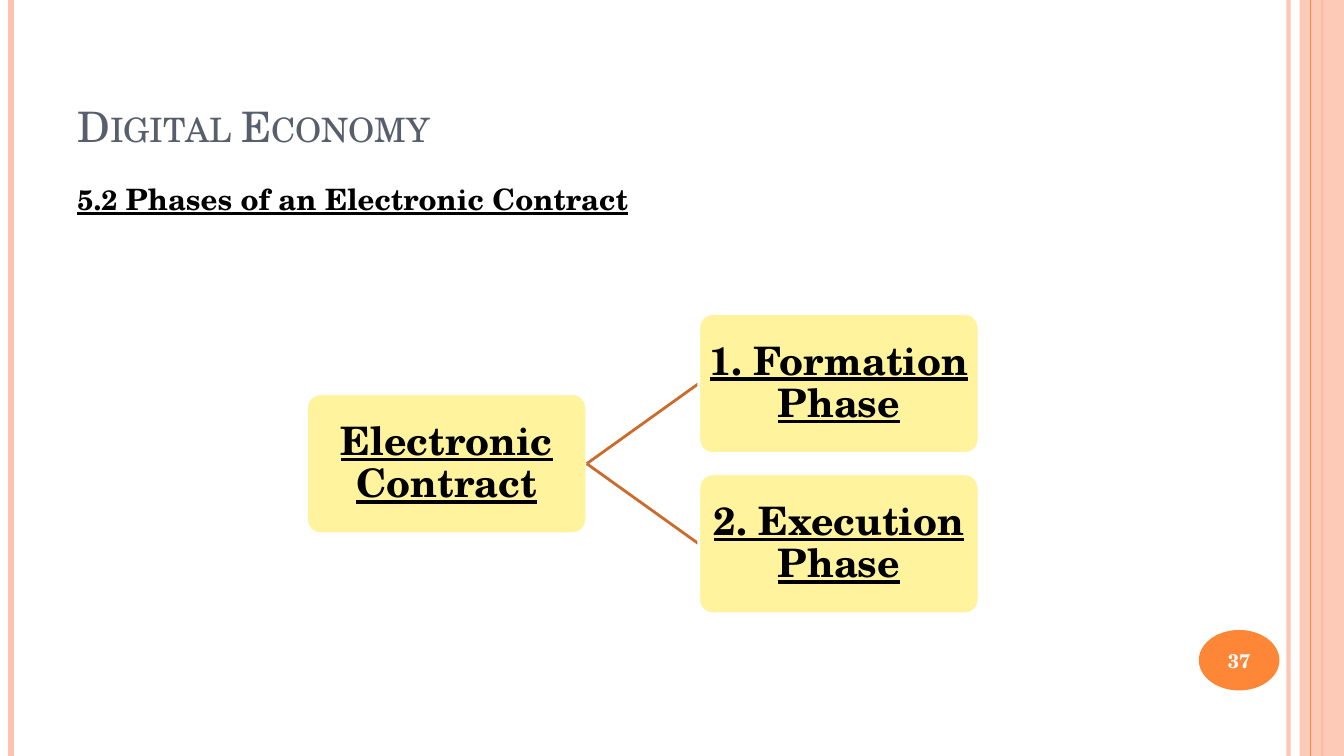
from lxml import etree
from pptx import Presentation
from pptx.dml.color import RGBColor
from pptx.enum import shapes, text
from pptx.oxml.ns import qn
from pptx.util import Inches, Pt

FONT = "TeX Gyre Schola"
WHITE = RGBColor(0xFF, 0xFF, 0xFF)
BLACK = RGBColor(0, 0, 0)
SLATE = RGBColor(0x57, 0x5F, 0x6D)
PEACH = RGBColor(0xFE, 0xC3, 0xAE)
ORANGE = RGBColor(0xFE, 0x86, 0x37)
RUST = RGBColor(0xCB, 0x6B, 0x2C)
YELLOW = RGBColor(0xFF, 0xF3, 0x9D)
WIDTH, HEIGHT = 13.33, 7.5


def set_alpha(fill_owner, percent):
    """Make the solid colour inside an element partly transparent."""
    color = fill_owner.find(".//" + qn("a:srgbClr"))
    etree.SubElement(color, qn("a:alpha")).set("val", str(percent * 1000))


def add_run(paragraph, words, size, color, bold=True, underline=False):
    run = paragraph.add_run()
    run.text = words
    font = run.font
    font.name, font.size, font.bold, font.underline = FONT, Pt(size), bold, underline
    font.color.rgb = color
    return run


def add_line(slide, start, end, color, width):
    line = slide.shapes.add_connector(
        shapes.MSO_CONNECTOR.STRAIGHT, *(Inches(v) for v in (*start, *end)))
    line.line.color.rgb = color
    line.line.width = Pt(width)
    etree.SubElement(line._element.spPr, qn("a:effectLst"))
    return line


def add_filled(slide, preset, box, color):
    shape = slide.shapes.add_shape(preset, *(Inches(v) for v in box))
    shape.shadow.inherit = False
    shape.fill.solid()
    shape.fill.fore_color.rgb = color
    shape.line.fill.background()
    return shape


def add_text_box(slide, box, anchor):
    frame = slide.shapes.add_textbox(*(Inches(v) for v in box)).text_frame
    frame.word_wrap = True
    frame.vertical_anchor = anchor
    return frame.paragraphs[0]


def add_border(slide, width, height):
    """Vertical stripes along both edges of the slide."""
    def stripe(x, color, weight):
        return add_line(slide, (x, 0), (x, height), color, weight)

    inner = stripe(width - 0.55, PEACH, 3)
    set_alpha(inner._element.spPr, 93)
    stripe(0.11, PEACH, 4.5)
    stripe(width - 0.22, ORANGE, 1.5)
    band = add_filled(slide, shapes.MSO_SHAPE.RECTANGLE,
                      (width - 0.44, 0, 0.44, height), PEACH)
    set_alpha(band._element.spPr, 87)
    stripe(width - 0.33, ORANGE, 0.75)


def add_page_number(slide, box, number):
    badge = add_filled(slide, shapes.MSO_SHAPE.OVAL, box, ORANGE)
    frame = badge.text_frame
    frame.word_wrap = False
    frame.vertical_anchor = text.MSO_ANCHOR.MIDDLE
    frame.paragraphs[0].alignment = text.PP_ALIGN.CENTER
    add_run(frame.paragraphs[0], number, 14, WHITE)


def add_headings(slide, left, top, width):
    title = add_text_box(slide, (left, top, width, 1.25), text.MSO_ANCHOR.BOTTOM)
    run = add_run(title, "Digital Economy", 30, SLATE, bold=False)
    run.font._element.set("cap", "small")
    section = add_text_box(slide, (left, top + 1.45, width, 0.6), text.MSO_ANCHOR.TOP)
    add_run(section, "5.2 ", 20, BLACK, underline=True)
    add_run(section, "Phases of an Electronic Contract", 21, BLACK, underline=True)


def add_card(slide, box, words):
    card = add_filled(slide, shapes.MSO_SHAPE.ROUNDED_RECTANGLE, box, YELLOW)
    card.adjustments[0] = 0.1
    card.line.color.rgb = WHITE
    card.line.width = Pt(2)
    frame = card.text_frame
    frame.word_wrap = True
    frame.vertical_anchor = text.MSO_ANCHOR.MIDDLE
    frame.margin_left = frame.margin_right = Inches(0.02)
    frame.margin_top = frame.margin_bottom = Inches(0.02)
    label = frame.paragraphs[0]
    label.alignment = text.PP_ALIGN.CENTER
    label.line_spacing = 0.9
    add_run(label, words, 28, BLACK, underline=True)
    return card


def add_phase_tree(slide, left, top, width, height, root, phases):
    """Root card on the left, joined to a column of phase cards on the right."""
    card_w, card_h = 2.78, 1.39
    middle = top + height / 2
    phase_left = left + width - card_w
    step = (height - card_h) / (len(phases) - 1)
    contract = add_card(slide, (left, middle - card_h / 2, card_w, card_h), root)
    for i, phase in enumerate(phases):
        phase_top = top + i * step
        branch = add_line(slide, (left + card_w, middle),
                          (phase_left, phase_top + card_h / 2), RUST, 2)
        card = add_card(slide, (phase_left, phase_top, card_w, card_h), phase)
        branch.begin_connect(contract, 3)
        branch.end_connect(card, 1)


def main():
    deck = Presentation()
    deck.slide_width, deck.slide_height = Inches(WIDTH), Inches(HEIGHT)
    slide = deck.slides.add_slide(deck.slide_layouts[6])
    add_border(slide, WIDTH, HEIGHT)
    add_page_number(slide, (11.89, 6.25, 0.8, 0.6), "37")
    add_headings(slide, 0.67, 0.3, 10.89)
    add_phase_tree(slide, 3.04, 3.11, 6.67, 2.98, "Electronic Contract",
                   ["1. Formation Phase", "2. Execution Phase"])
    deck.save("out.pptx")


if __name__ == "__main__":
    main()
